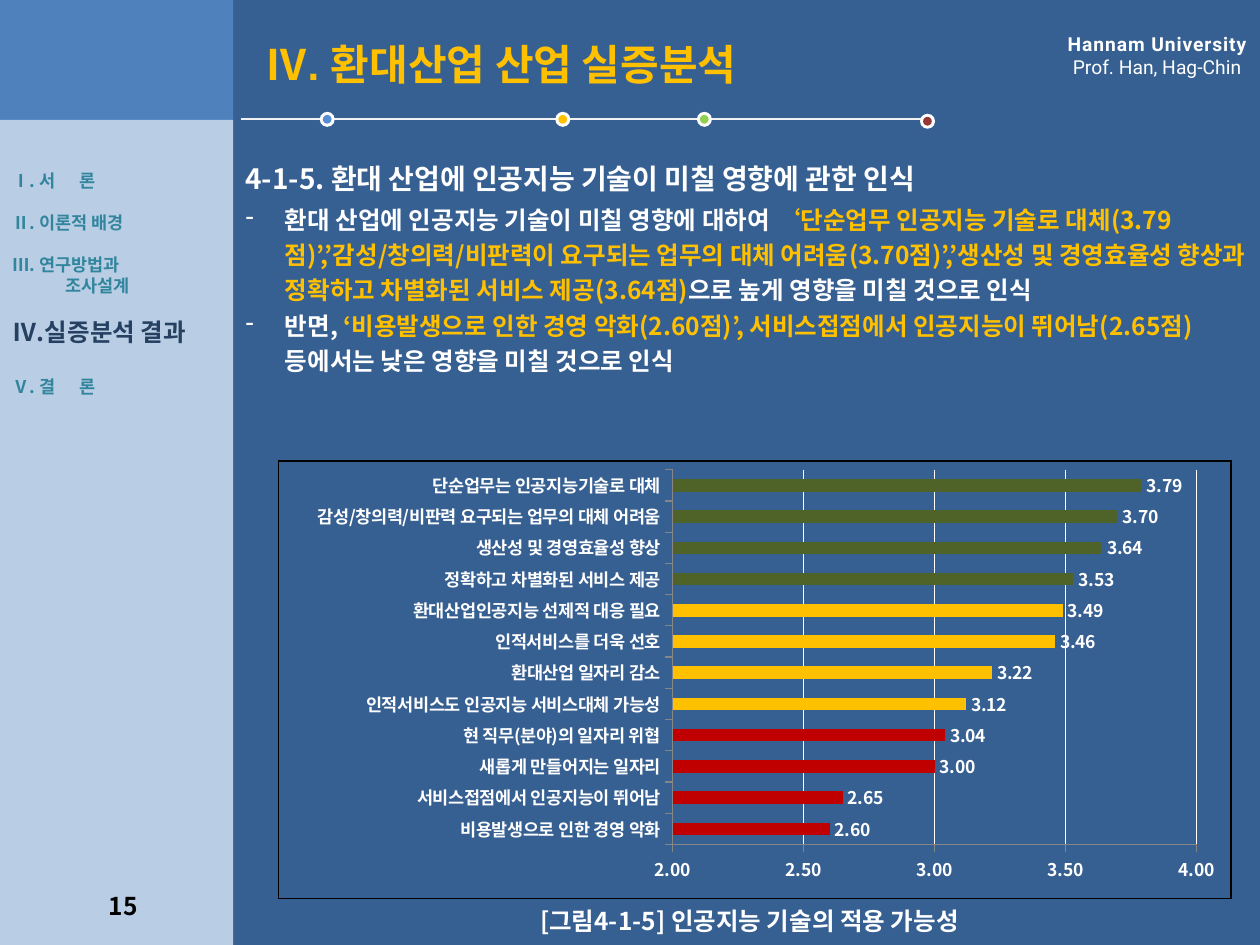
from lxml.etree import SubElement, fromstring
from pptx import Presentation
from pptx.chart.data import CategoryChartData
from pptx.dml.color import RGBColor
from pptx.enum.chart import XL_CHART_TYPE, XL_LABEL_POSITION, XL_TICK_MARK
from pptx.enum.shapes import MSO_CONNECTOR, MSO_SHAPE
from pptx.enum.text import MSO_ANCHOR, PP_ALIGN
from pptx.oxml.ns import nsdecls, qn
from pptx.util import Pt

KOREAN = "Noto Sans CJK KR"
WHITE, GOLD, TEAL, NAVY = "FFFFFF", "FFC000", "31859C", "254061"
RED, GREEN, GREY = "C00000", "4F6228", "868686"


def color(value):
    return RGBColor.from_string(value)


def style_font(font, size=14, name=KOREAN, fill=WHITE, bold=True, spacing=0):
    font.size, font.bold, font.name = Pt(size), bold, name
    font.color.rgb = color(fill)
    properties = font._element
    east_asian = SubElement(properties, qn("a:ea"), typeface=name)
    properties.find(qn("a:latin")).addnext(east_asian)
    if spacing:
        properties.set("spc", str(int(spacing * 100)))


def run(text, **style):
    return text, style


def line(*runs, before=0, indent=0, tab=None, bullet=None, spacing=None):
    return dict(runs=runs, before=before, indent=indent, tab=tab,
                bullet=bullet, spacing=spacing)


class SlideBuilder:
    def __init__(self, slide):
        self.slide = slide
        self.shapes = slide.shapes

    def block(self, kind, left, top, width, height, fill):
        shape = self.shapes.add_shape(kind, Pt(left), Pt(top), Pt(width), Pt(height))
        shape.shadow.inherit = False
        shape.fill.solid()
        shape.fill.fore_color.rgb = color(fill)
        shape.line.fill.background()

    def dot(self, center_x, center_y, fill):
        for diameter, tone in ((8.6, WHITE), (5, fill)):
            self.block(MSO_SHAPE.OVAL, center_x - diameter / 2,
                       center_y - diameter / 2, diameter, diameter, tone)

    def rule(self, start, end, top, fill, width):
        connector = self.shapes.add_connector(
            MSO_CONNECTOR.STRAIGHT, Pt(start), Pt(top), Pt(end), Pt(top))
        connector.line.color.rgb = color(fill)
        connector.line.width = Pt(width)
        SubElement(connector._element.spPr, qn("a:effectLst"))

    def text(self, left, top, width, height, *lines, align=PP_ALIGN.LEFT,
             anchor=MSO_ANCHOR.TOP, side_margin=7.2):
        box = self.shapes.add_textbox(Pt(left), Pt(top), Pt(width), Pt(height))
        frame = box.text_frame
        frame.word_wrap = True
        frame.vertical_anchor = anchor
        frame.margin_left = frame.margin_right = Pt(side_margin)
        for index, item in enumerate(lines):
            paragraph = frame.add_paragraph() if index else frame.paragraphs[0]
            properties = paragraph._p.get_or_add_pPr()
            if item["indent"]:
                properties.set("marL", str(Pt(item["indent"])))
            if item["bullet"]:
                properties.set("indent", str(-Pt(item["indent"])))
                SubElement(properties, qn("a:buChar"), char=item["bullet"])
            if item["tab"]:
                tabs = SubElement(properties, qn("a:tabLst"))
                SubElement(tabs, qn("a:tab"), pos=str(Pt(item["tab"])), algn="l")
            paragraph.alignment = align
            if item["before"]:
                paragraph.space_before = Pt(item["before"])
            if item["spacing"]:
                paragraph.line_spacing = item["spacing"]
            for content, style in item["runs"]:
                piece = paragraph.add_run()
                piece.text = content
                style_font(piece.font, **style)

    def frame_table(self, left, top, width, height):
        shape = self.shapes.add_table(1, 1, Pt(left), Pt(top), Pt(width), Pt(height))
        table = shape.table
        table.first_row = table.horz_banding = False
        cell = table.cell(0, 0)
        properties = cell._tc.get_or_add_tcPr()
        for side in ("lnL", "lnR", "lnT", "lnB"):
            border = SubElement(properties, qn(f"a:{side}"), w=str(Pt(1)))
            fill = SubElement(border, qn("a:solidFill"))
            SubElement(fill, qn("a:srgbClr"), val="000000")
        cell.fill.background()

    def bar_chart(self, left, top, width, height, rows, plot_layout):
        data = CategoryChartData(number_format="###0.00")
        data.categories = [name for name, _, _ in rows]
        data.add_series("Series 1", [value for _, value, _ in rows])
        chart = self.shapes.add_chart(
            XL_CHART_TYPE.BAR_CLUSTERED, Pt(left), Pt(top), Pt(width), Pt(height), data).chart
        chart.has_legend = chart.has_title = False
        style_font(chart.font, size=10)

        plot = chart.plots[0]
        plot.vary_by_categories = False
        plot.gap_width = 150
        plot.has_data_labels = True
        labels = plot.data_labels
        labels.show_value = True
        labels.position = XL_LABEL_POSITION.OUTSIDE_END
        labels.number_format, labels.number_format_is_linked = "###0.00", False
        for index, (_, _, fill) in enumerate(rows):
            point_fill = plot.series[0].points[index].format.fill
            point_fill.solid()
            point_fill.fore_color.rgb = color(fill)

        for axis in (chart.category_axis, chart.value_axis):
            axis.major_tick_mark = XL_TICK_MARK.OUTSIDE
            axis.format.line.color.rgb = color(GREY)
        chart.category_axis.has_major_gridlines = False
        axis = chart.value_axis
        axis.minimum_scale, axis.maximum_scale, axis.major_unit = 2, 4, 0.5
        axis.tick_labels.number_format = "###0.00"
        axis.tick_labels.number_format_is_linked = False
        axis.major_gridlines.format.line.color.rgb = color(WHITE)
        axis.major_gridlines.format.line.width = Pt(0.75)

        # Fixed inner plot area
        area = chart._chartSpace.find(".//" + qn("c:plotArea"))
        for layout in area.findall(qn("c:layout")):
            area.remove(layout)
        layout = fromstring(f'<c:layout {nsdecls("c")}><c:manualLayout/></c:layout>')
        settings = [("layoutTarget", "inner"), ("xMode", "edge"), ("yMode", "edge")]
        for tag, value in settings + list(zip("xywh", plot_layout)):
            SubElement(layout[0], qn(f"c:{tag}"), val=str(value))
        area.insert(0, layout)


def main():
    presentation = Presentation()
    presentation.slide_width, presentation.slide_height = Pt(720), Pt(540)
    builder = SlideBuilder(presentation.slides.add_slide(presentation.slide_layouts[6]))

    # Background panels
    builder.block(MSO_SHAPE.RECTANGLE, 133.2, 0, 586.8, 540, "376092")
    builder.block(MSO_SHAPE.RECTANGLE, 0, 0, 133.2, 69, "4F81BD")
    builder.block(MSO_SHAPE.RECTANGLE, 0, 68.5, 133.2, 471.5, "B9CDE5")

    # Header
    builder.text(602.5, 15, 117.5, 34,
                 line(run("Hannam University", size=11, name="Roboto", spacing=0.5)),
                 line(run("Prof. Han, Hag-Chin", size=11, name="Roboto", bold=False)),
                 align=PP_ALIGN.CENTER, side_margin=0)
    builder.text(144.7, 18.7, 391, 36,
                 line(run("Ⅳ", size=24, name="Noto Sans CJK JP", fill=GOLD),
                      run(". ", size=24, name="Arial", fill=GOLD),
                      run("환대산업 산업 실증분석", size=24, fill=GOLD)))
    builder.rule(137.5, 528.5, 68.2, "F2F2F2", 1.25)
    for center_x, center_y, fill in ((321.6, 68.2, GOLD), (187, 68.2, "558ED5"),
                                     (402.5, 68.2, "92D050"), (530, 69.3, "953735")):
        builder.dot(center_x, center_y, fill)

    # Sidebar contents and page number
    item = dict(size=10, fill=TEAL)
    builder.text(0, 71.3, 133.2, 181.4,
                 line(run("Ⅰ. 서\t론", **item), tab=38.5),
                 line(run("Ⅱ. 이론적 배경", **item), before=12),
                 line(run("Ⅲ. 연구방법과", **item), before=12),
                 line(run("조사설계", **item), indent=30.5),
                 line(run("Ⅳ.실증분석 결과", fill=NAVY), before=12),
                 line(run("Ⅴ. 결\t론", **item), before=16.8, tab=38.5),
                 anchor=MSO_ANCHOR.MIDDLE)
    builder.text(50.4, 506.2, 40.3, 22.3, line(run("15", fill="000000")),
                 align=PP_ALIGN.CENTER, anchor=MSO_ANCHOR.MIDDLE)

    # Findings
    builder.text(133.2, 88.6, 586.8, 26.6,
                 line(run("4-1-5. 환대 산업에 인공지능 기술이 미칠 영향에 관한 인식", size=16)))
    finding = dict(indent=22.5, bullet="-", spacing=1.2)
    builder.text(
        133.2, 110.2, 586.8, 126,
        line(run("환대 산업에 인공지능 기술이 미칠 영향에 대하여 "),
             run("‘단순업무 인공지능 기술로 대체(3.79점)’,’감성/창의력/비판력이 요구되는 "
                 "업무의 대체 어려움(3.70점)’,’생산성 및 경영효율성 향상과 정확하고 "
                 "차별화된 서비스 제공(3.64점)", fill=GOLD),
             run("으로 높게 영향을 미칠 것으로 인식"), **finding),
        line(run("반면, "),
             run("‘비용발생으로 인한 경영 악화(2.60점)’, 서비스접점에서 인공지능이 "
                 "뛰어남(2.65점) ", fill=GOLD),
             run("등에서는 낮은 영향을 미칠 것으로 인식"), **finding))

    # Chart with frame and caption
    builder.frame_table(159.1, 263.5, 544.3, 249.8)
    rows = [("비용발생으로 인한 경영 악화", 2.60, RED),
            ("서비스접점에서 인공지능이 뛰어남", 2.65, RED),
            ("새롭게 만들어지는 일자리", 3.00, RED),
            ("현 직무(분야)의 일자리 위협", 3.04, RED),
            ("인적서비스도 인공지능 서비스대체 가능성", 3.12, GOLD),
            ("환대산업 일자리 감소", 3.22, GOLD),
            ("인적서비스를 더욱 선호", 3.46, GOLD),
            ("환대산업인공지능 선제적 대응 필요", 3.49, GOLD),
            ("정확하고 차별화된 서비스 제공", 3.53, GREEN),
            ("생산성 및 경영효율성 향상", 3.64, GREEN),
            ("감성/창의력/비판력 요구되는 업무의 대체 어려움", 3.70, GREEN),
            ("단순업무는 인공지능기술로 대체", 3.79, GREEN)]
    builder.bar_chart(161.3, 263.5, 544.3, 246.2, rows, (0.41, 0.02, 0.55, 0.87))
    builder.text(156.2, 514.8, 544.3, 22.3,
                 line(run("[그림4-1-5] 인공지능 기술의 적용 가능성")),
                 align=PP_ALIGN.CENTER, anchor=MSO_ANCHOR.MIDDLE)

    presentation.save("out.pptx")


if __name__ == "__main__":
    main()
